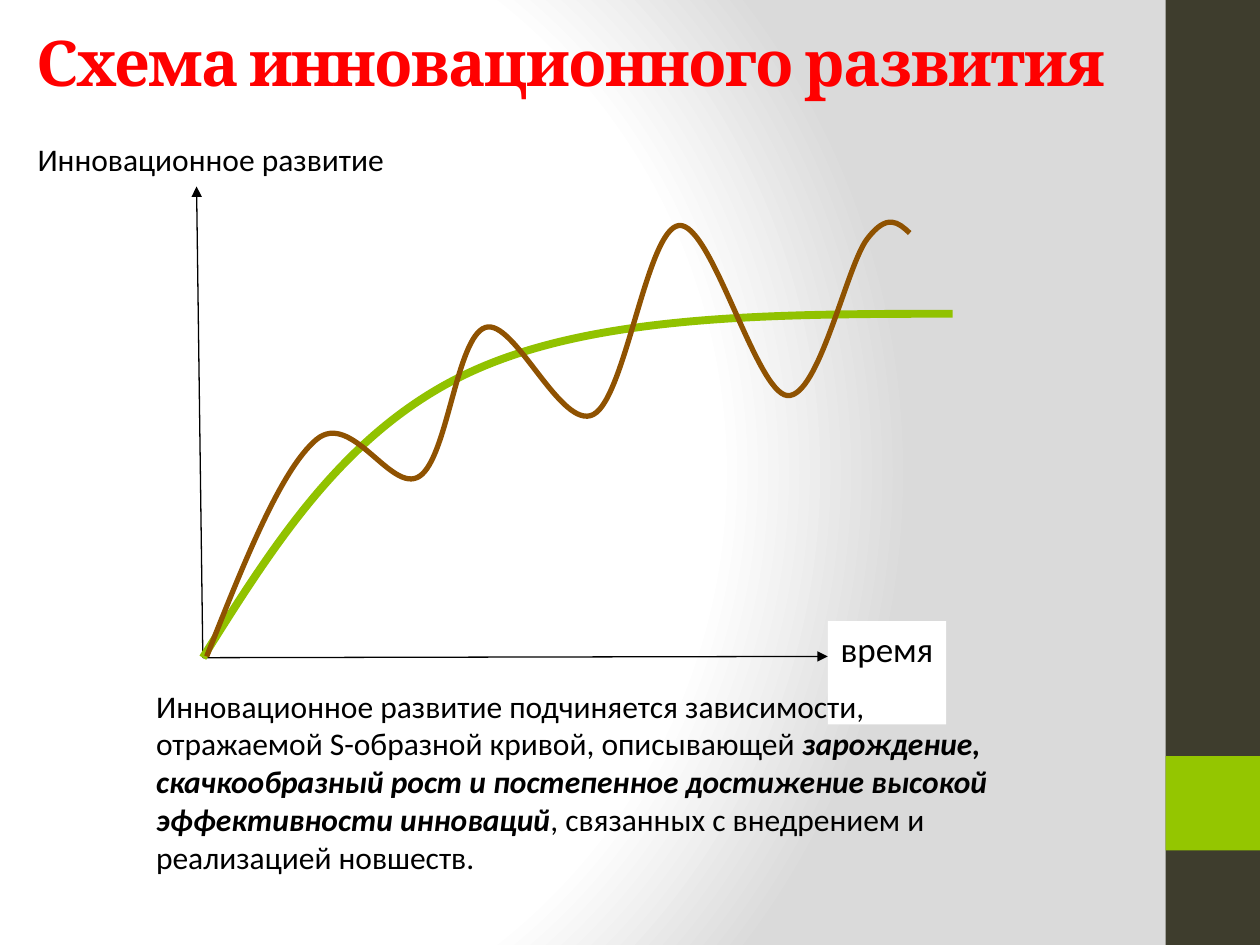
from lxml.etree import SubElement
from pptx import Presentation
from pptx.dml.color import RGBColor
from pptx.enum.shapes import MSO_CONNECTOR, MSO_SHAPE
from pptx.enum.text import MSO_ANCHOR, MSO_AUTO_SIZE, PP_ALIGN
from pptx.oxml import parse_xml
from pptx.oxml.ns import nsdecls, qn
from pptx.util import Inches, Pt

COLORS = {"white": "FFFFFF", "gray": "DADADA", "dark": "3E3D2D", "lime": "94C600",
          "red": "FF0000", "black": "000000", "green": "91C200", "brown": "8F5201"}

TITLE = "Схема инновационного развития"
Y_LABEL = "Инновационное развитие"
X_LABEL = "время"
SUMMARY = [  # (text, emphasized)
    ("Инновационное развитие подчиняется зависимости, отражаемой S-образной кривой, описывающей ", False),
    ("зарождение, скачкообразный рост и постепенное достижение высокой эффективности инноваций", True),
    (", связанных с внедрением и реализацией новшеств.", False),
]

SLIDE_WIDTH, SLIDE_HEIGHT = 10, 7.5
SIDEBAR_WIDTH = 0.75
SIDEBAR_LEFT = SLIDE_WIDTH - SIDEBAR_WIDTH
SIDEBAR = [  # colour, top, height
    ("dark", 0, SLIDE_HEIGHT),
    ("lime", 6, SIDEBAR_WIDTH),
]

ORIGIN = (1.61, 5.22)
Y_AXIS_END = (1.56, 1.48)
X_AXIS_END = (6.57, 5.21)

# The points each smooth curve passes through
TREND = [ORIGIN, (3.74, 2.95), (7.56, 2.49)]
WAVE_START, WAVE_END = (1.64, 5.21), (7.22, 1.85)
PEAKS = [(2.51, 3.49), (3.85, 2.6), (5.39, 1.79), (6.88, 1.9)]
TROUGHS = [(3.33, 3.78), (4.71, 3.29), (6.25, 3.14)]
WAVE = [WAVE_START, *sorted(PEAKS + TROUGHS), WAVE_END]
CURVES = [("green", 4.5, TREND), ("brown", 3, WAVE)]  # colour, line width, knots


def rgb(name):
    return RGBColor.from_string(COLORS[name])


def write(box, spans, size=18, font="Calibri", color="black", bold=False,
          align=PP_ALIGN.LEFT, anchor=MSO_ANCHOR.TOP, wrap=True, spacing=0):
    """Fill a box with one paragraph; spans is a text or a list of (text, emphasized)."""
    frame = box.text_frame
    frame.word_wrap = wrap
    frame.auto_size = MSO_AUTO_SIZE.NONE
    frame.vertical_anchor = anchor
    para = frame.paragraphs[0]
    para.alignment = align
    if isinstance(spans, str):
        spans = [(spans, False)]
    for text, emphasized in spans:
        span = para.add_run()
        span.text = text
        span.font.name, span.font.size = font, Pt(size)
        span.font.bold = bold or emphasized
        span.font.italic = emphasized
        span.font.color.rgb = rgb(color)
        if spacing:
            span.font._element.set("spc", str(spacing * 100))


def add_text(page, area, spans, **style):
    write(page.shapes.add_textbox(*map(Inches, area)), spans, **style)


def add_block(page, area, color):
    block = page.shapes.add_shape(MSO_SHAPE.RECTANGLE, *map(Inches, area))
    block.shadow.inherit = False
    block.fill.solid()
    block.fill.fore_color.rgb = rgb(color)
    block.line.fill.background()
    return block


def add_axis(page, end):
    axis = page.shapes.add_connector(MSO_CONNECTOR.STRAIGHT, *map(Inches, ORIGIN + end))
    axis.line.color.rgb = rgb("black")
    axis.line.width = Pt(0.75)
    SubElement(axis.line._get_or_add_ln(), qn("a:tailEnd"), type="triangle")
    SubElement(axis._element.spPr, qn("a:effectLst"))


def midpoint(start, end):
    return tuple((a + b) / 2 for a, b in zip(start, end))


def smooth(knots):
    """Return the Bézier segments (handle, handle, knot) of a smooth curve through knots.

    At an inner knot both handles lie along the line joining its neighbours,
    a sixth of that line's length away. At an end the handle lies halfway
    to the handle of the next knot.
    """
    arriving, leaving = [], []
    for before, knot, after in zip(knots, knots[1:], knots[2:]):
        step = [(b - a) / 6 for a, b in zip(before, after)]
        arriving.append(tuple(k - s for k, s in zip(knot, step)))
        leaving.append(tuple(k + s for k, s in zip(knot, step)))
    leaving.insert(0, midpoint(knots[0], arriving[0]))
    arriving.append(midpoint(leaving[-1], knots[-1]))
    return list(zip(leaving, arriving, knots[1:]))


def add_curve(page, color, width, knots):
    """Draw lines through handles and knots, then merge each three into one Bézier."""
    points = [point for segment in smooth(knots) for point in segment]
    builder = page.shapes.build_freeform(*map(Inches, knots[0]))
    builder.add_line_segments([tuple(map(Inches, point)) for point in points], close=False)
    curve = builder.convert_to_shape()
    lines = list(curve._element.iter(qn("a:lnTo")))
    for first in range(0, len(lines), 3):
        bezier = SubElement(lines[first].getparent(), qn("a:cubicBezTo"))
        for line in lines[first:first + 3]:
            bezier.append(line[0])
            line.getparent().remove(line)
    curve.shadow.inherit = False
    curve.fill.background()
    curve.line.color.rgb = rgb(color)
    curve.line.width = Pt(width)


def set_background(page):
    stops = "".join(f'<a:gs pos="{position}000"><a:srgbClr val="{COLORS[name]}"/></a:gs>'
                    for position, name in [(0, "white"), (75, "white"), (100, "gray")])
    page._element.cSld.insert(0, parse_xml(
        f'<p:bg {nsdecls("p", "a")}><p:bgPr><a:gradFill rotWithShape="1">'
        f'<a:gsLst>{stops}</a:gsLst><a:path path="circle">'
        '<a:fillToRect l="20000" t="50000" r="100000" b="50000"/></a:path>'
        '</a:gradFill><a:effectLst/></p:bgPr></p:bg>'))


def add_title(page):
    title = page.shapes.title
    title.left, title.top, title.width, title.height = map(Inches, (0.12, 0, 8.82, 0.98))
    write(title, TITLE, size=36, font="Cambria", color="red", bold=True,
          align=PP_ALIGN.CENTER, anchor=MSO_ANCHOR.MIDDLE, spacing=-1)


def main():
    deck = Presentation()
    deck.slide_width, deck.slide_height = Inches(SLIDE_WIDTH), Inches(SLIDE_HEIGHT)
    title_only = deck.slide_layouts.get_by_name("Title Only")
    page = deck.slides.add_slide(title_only)

    set_background(page)
    for color, top, height in SIDEBAR:
        add_block(page, (SIDEBAR_LEFT, top, SIDEBAR_WIDTH, height), color)
    add_title(page)

    for end in (Y_AXIS_END, X_AXIS_END):
        add_axis(page, end)
    time_box = add_block(page, (X_AXIS_END[0], 4.93, 0.94, 0.82), "white")
    write(time_box, X_LABEL, size=20, align=PP_ALIGN.CENTER, wrap=False)
    for color, width, knots in CURVES:
        add_curve(page, color, width, knots)

    add_text(page, (0.2, 1.06, 4.17, 0.4), Y_LABEL)
    add_text(page, (1.14, 5.4, 7.01, 1.92), SUMMARY)
    deck.save("out.pptx")


if __name__ == "__main__":
    main()
